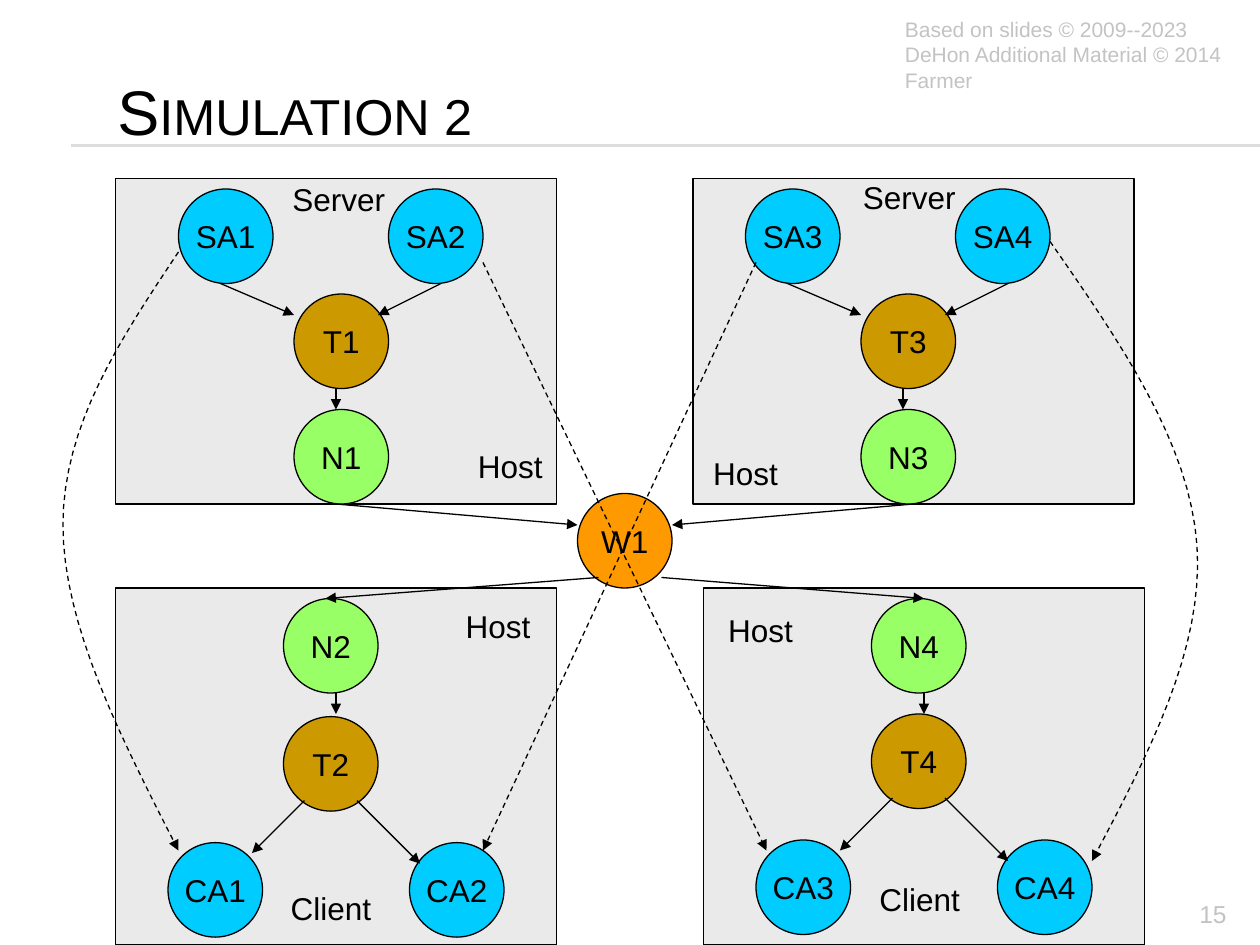
from dataclasses import dataclass

from lxml import etree
from pptx import Presentation
from pptx.dml.color import RGBColor
from pptx.enum.dml import MSO_LINE
from pptx.enum.shapes import MSO_CONNECTOR, MSO_SHAPE
from pptx.enum.text import MSO_ANCHOR, PP_ALIGN
from pptx.oxml.ns import qn
from pptx.util import Pt

STRAIGHT = MSO_CONNECTOR.STRAIGHT
RECTANGLE = MSO_SHAPE.RECTANGLE
OVAL = MSO_SHAPE.OVAL
DASH = MSO_LINE.DASH
MIDDLE = MSO_ANCHOR.MIDDLE
TOP = MSO_ANCHOR.TOP
LEFT = PP_ALIGN.LEFT
CENTER = PP_ALIGN.CENTER
RIGHT = PP_ALIGN.RIGHT


@dataclass(frozen=True)
class Theme:
    font: str = "Arial"
    ink: str = "000000"
    muted: str = "C3C3C3"
    rule: str = "DDDDDD"
    host: str = "EAEAEA"
    agent: str = "00CCFF"
    transport: str = "CC9900"
    network: str = "99FF66"
    wire: str = "FF9900"
    title_size: int = 36
    body_size: int = 18
    number_size: int = 14
    credit_size: int = 12
    line_width: float = 0.75


THEME = Theme()
NODE_SIZE = 54
HOST_WIDTH = 252
SERVER_SHIFT = 324
CLIENT_SHIFT = 336
CLIENT_RISE = -1.5
CURVE_STEPS = 16


def color(value):
    return RGBColor.from_string(value)


def write_text(shape, text, size, ink=THEME.ink, align=LEFT, anchor=TOP):
    frame = shape.text_frame
    frame.text = text
    frame.vertical_anchor = anchor
    paragraph = frame.paragraphs[0]
    paragraph.alignment = align
    font = paragraph.runs[0].font
    font.name = THEME.font
    font.size = Pt(size)
    font.color.rgb = color(ink)
    return paragraph.runs[0]


def add_text(slide, text, box, size, ink=THEME.ink, align=LEFT, anchor=TOP, wrap=True):
    text_box = slide.shapes.add_textbox(*map(Pt, box))
    text_box.text_frame.word_wrap = wrap
    return write_text(text_box, text, size, ink, align, anchor)


def add_title(slide, text):
    run = add_text(slide, text, (60, 18, 612, 90), THEME.title_size, anchor=MIDDLE)
    run.font._element.set("cap", "small")


def add_label(slide, text, left, top, width):
    add_text(slide, text, (left, top, width, 29), THEME.body_size, wrap=False)


def style_line(line, ink=THEME.ink, dashed=False):
    line.color.rgb = color(ink)
    line.width = Pt(THEME.line_width)
    if dashed:
        line.dash_style = DASH


def add_arrowhead(line):
    properties = line._get_or_add_ln()
    etree.SubElement(properties, qn("a:tailEnd"), type="triangle")


def add_filled_shape(slide, preset, box, fill):
    shape = slide.shapes.add_shape(preset, *map(Pt, box))
    shape.shadow.inherit = False
    shape.fill.solid()
    shape.fill.fore_color.rgb = color(fill)
    style_line(shape.line)
    return shape


def add_host(slide, left, top, height):
    add_filled_shape(slide, RECTANGLE, (left, top, HOST_WIDTH, height), THEME.host)


def add_node(slide, text, left, top, fill):
    node = add_filled_shape(slide, OVAL, (left, top, NODE_SIZE, NODE_SIZE), fill)
    node.text_frame.word_wrap = False
    write_text(node, text, THEME.body_size, align=CENTER, anchor=MIDDLE)


def add_line(slide, ends, ink=THEME.ink, dashed=False, arrow=True):
    connector = slide.shapes.add_connector(STRAIGHT, *map(Pt, ends))
    style_line(connector.line, ink, dashed)
    if arrow:
        add_arrowhead(connector.line)
    etree.SubElement(connector._element.spPr, qn("a:effectLst"))


def bezier_point(controls, t):
    weights = ((1 - t) ** 3, 3 * t * (1 - t) ** 2, 3 * t * t * (1 - t), t ** 3)
    return tuple(
        Pt(sum(weight * point[axis] for weight, point in zip(weights, controls)))
        for axis in (0, 1)
    )


def add_curved_arrow(slide, controls):
    points = [
        bezier_point(controls[start:start + 4], step / CURVE_STEPS)
        for start in range(0, len(controls) - 1, 3)
        for step in range(1, CURVE_STEPS + 1)
    ]
    builder = slide.shapes.build_freeform(*map(Pt, controls[0]))
    builder.add_line_segments(points, close=False)
    curve = builder.convert_to_shape()
    curve.shadow.inherit = False
    curve.fill.background()
    style_line(curve.line, dashed=True)
    add_arrowhead(curve.line)


def add_server(slide, shift, first_agent, second_agent, transport, network):
    add_node(slide, first_agent, 102 + shift, 108, THEME.agent)
    add_node(slide, second_agent, 222 + shift, 108, THEME.agent)
    add_node(slide, transport, 168 + shift, 168, THEME.transport)
    add_node(slide, network, 168 + shift, 234, THEME.network)
    add_line(slide, (126 + shift, 162, 168 + shift, 180))
    add_line(slide, (252 + shift, 162, 216 + shift, 180))
    add_line(slide, (192 + shift, 222, 192 + shift, 234))


def add_client(slide, shift, rise, network, transport, first_agent, second_agent):
    add_node(slide, network, 162 + shift, 342, THEME.network)
    add_node(slide, transport, 162 + shift, 409.5 + rise, THEME.transport)
    add_node(slide, first_agent, 96 + shift, 481.5 + rise, THEME.agent)
    add_node(slide, second_agent, 234 + shift, 481.5 + rise, THEME.agent)
    add_line(slide, (192 + shift, 396, 192 + shift, 408))
    add_line(slide, (174 + shift, 457.5 + rise, 144 + shift, 487.5 + rise))
    add_line(slide, (204 + shift, 457.5 + rise, 240 + shift, 493.5 + rise))


def main():
    presentation = Presentation()
    presentation.slide_width = Pt(720)
    presentation.slide_height = Pt(540)
    slide = presentation.slides.add_slide(presentation.slide_layouts[6])

    for top in (82.8, 83.5):
        add_line(slide, (40.5, top, 720, top), THEME.rule, arrow=False)
    add_text(slide, "15", (648, 510, 60, 19.5), THEME.number_size, THEME.muted, RIGHT)
    add_title(slide, "Simulation 2")

    for left, top, height in ((66, 102, 186), (396, 102, 186), (66, 336, 204), (402, 336, 204)):
        add_host(slide, left, top, height)
    add_server(slide, 0, "SA1", "SA2", "T1", "N1")
    add_server(slide, SERVER_SHIFT, "SA3", "SA4", "T3", "N3")
    add_client(slide, 0, 0, "N2", "T2", "CA1", "CA2")
    add_client(slide, CLIENT_SHIFT, CLIENT_RISE, "N4", "T4", "CA3", "CA4")
    add_node(slide, "W1", 330, 282, THEME.wire)

    for ends in ((192, 288, 330, 300), (342, 330, 186, 342),
                 (522, 288, 384, 300), (378, 330, 528, 342)):
        add_line(slide, ends)
    for ends in ((276, 150, 438, 486), (432, 150, 276, 486)):
        add_line(slide, ends, dashed=True)
    add_curved_arrow(slide, ((102, 144), (69, 193.5), (36, 243), (36, 300),
                             (36, 357), (69, 421.5), (102, 486)))
    add_curved_arrow(slide, ((600, 138), (640, 195.5), (680, 253), (684, 312),
                             (688, 371), (656, 431.5), (624, 492)))

    for left, top in ((259, 343.5), (266, 252), (400.5, 256), (409, 345.5)):
        add_label(slide, "Host", left, top, 52)
    for text, left, top, width in (("Server", 160, 99.5, 68.5), ("Server", 486, 98, 68.5),
                                   ("Client", 495.5, 499.5, 61), ("Client", 159, 504.5, 61)):
        add_label(slide, text, left, top, width)
    credit = "Based on slides © 2009--2023 DeHon Additional Material © 2014 Farmer"
    add_text(slide, credit, (510, 6, 198, 23), THEME.credit_size, THEME.muted)

    presentation.save("out.pptx")


if __name__ == "__main__":
    main()
